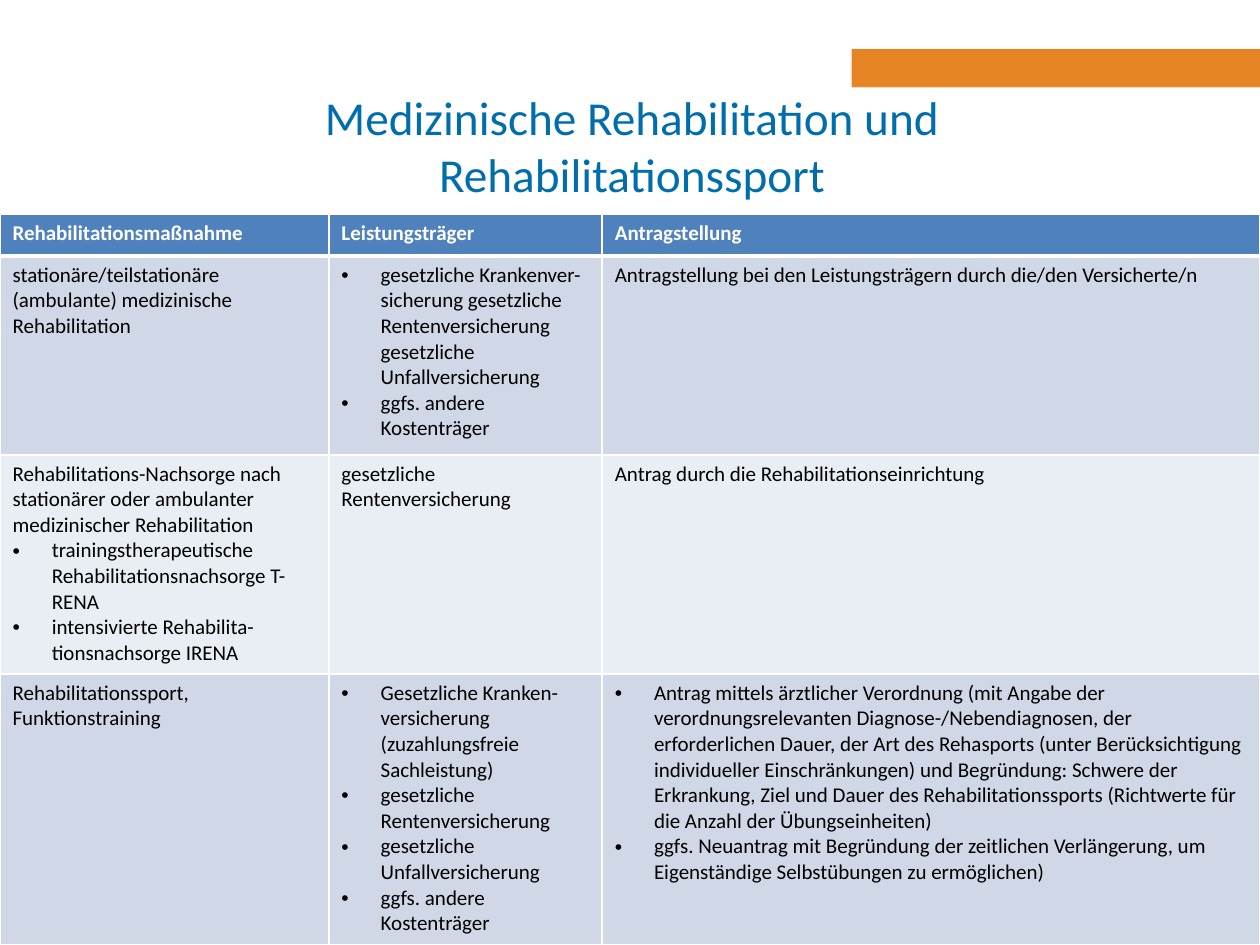
from lxml import etree
from pptx import Presentation
from pptx.dml.color import RGBColor
from pptx.enum import shapes, text
from pptx.oxml.ns import qn
from pptx.util import Cm, Pt

# Content: a leading "• " marks a bulleted paragraph
TITLE = "Medizinische Rehabilitation und Rehabilitationssport"
HEADER = ["Rehabilitationsmaßnahme", "Leistungsträger", "Antragstellung"]
BODY = [
    [
        ["stationäre/teilstationäre (ambulante) medizinische Rehabilitation"],
        ["• gesetzliche Krankenver-sicherung gesetzliche Rentenversicherung "
         "gesetzliche Unfallversicherung",
         "• ggfs. andere Kostenträger"],
        ["Antragstellung bei den Leistungsträgern durch die/den Versicherte/n"],
    ],
    [
        ["Rehabilitations-Nachsorge nach stationärer oder ambulanter "
         "medizinischer Rehabilitation",
         "• trainingstherapeutische Rehabilitationsnachsorge T-RENA",
         "• intensivierte Rehabilita-tionsnachsorge IRENA"],
        ["gesetzliche Rentenversicherung"],
        ["Antrag durch die Rehabilitationseinrichtung"],
    ],
    [
        ["Rehabilitationssport,\vFunktionstraining"],
        ["• Gesetzliche Kranken-versicherung (zuzahlungsfreie Sachleistung)",
         "• gesetzliche Rentenversicherung",
         "• gesetzliche Unfallversicherung",
         "• ggfs. andere Kostenträger"],
        ["• Antrag mittels ärztlicher Verordnung (mit Angabe der "
         "verordnungsrelevanten Diagnose-/Nebendiagnosen, der erforderlichen "
         "Dauer, der Art des Rehasports (unter Berücksichtigung individueller "
         "Einschränkungen) und Begründung: Schwere der Erkrankung, Ziel und "
         "Dauer des Rehabilitationssports (Richtwerte für die Anzahl der "
         "Übungseinheiten)",
         "• ggfs. Neuantrag mit Begründung der zeitlichen Verlängerung, um "
         "Eigenständige Selbstübungen zu ermöglichen)"],
    ],
]

FONT = "Calibri"
WHITE = RGBColor(0xFF, 0xFF, 0xFF)
BLACK = RGBColor(0, 0, 0)
ORANGE = RGBColor(0xE6, 0x83, 0x23)
TITLE_BLUE = RGBColor(0x00, 0x6E, 0xAC)
HEADER_BLUE = RGBColor(0x4F, 0x81, 0xBD)
BANDS = [RGBColor(0xD0, 0xD8, 0xE8), RGBColor(0xE9, 0xED, 0xF4)]

PAGE_WIDTH, PAGE_HEIGHT = 25.4, 19.05
COLUMN_WIDTHS = [6.63, 5.51, 13.26]
ROW_HEIGHTS = [0.84, 4.01, 4.42, 5.46]
TABLE_TOP = 4.32
BULLET_INDENT = Cm(0.79)


def add_bar(page, left, top, width, height, color):
    bar = page.shapes.add_shape(shapes.MSO_SHAPE.RECTANGLE,
                                Cm(left), Cm(top), Cm(width), Cm(height))
    bar.shadow.inherit = False
    bar.fill.solid()
    bar.fill.fore_color.rgb = color
    bar.line.fill.background()
    return bar


def style(para, size, color, bold=False):
    for span in para.runs:
        span.font.name = FONT
        span.font.size = Pt(size)
        span.font.bold = bold
        span.font.color.rgb = color


def add_bullet(para):
    properties = para._p.get_or_add_pPr()
    properties.set("marL", str(BULLET_INDENT))
    properties.set("indent", str(-BULLET_INDENT))
    etree.SubElement(properties, qn("a:buFont"), typeface="Arial")
    etree.SubElement(properties, qn("a:buChar"), char="•")


def set_borders(cell, bottom_width):
    properties = cell._tc.get_or_add_tcPr()
    widths = {"a:lnL": 1, "a:lnR": 1, "a:lnT": 1, "a:lnB": bottom_width}
    for place, (tag, width) in enumerate(widths.items()):
        line = etree.Element(qn(tag), w=str(Pt(width)))
        fill = etree.SubElement(line, qn("a:solidFill"))
        etree.SubElement(fill, qn("a:srgbClr"), val=str(WHITE))
        properties.insert(place, line)


def fill_cell(cell, lines, background, color, bold=False, bottom_width=1):
    cell.fill.solid()
    cell.fill.fore_color.rgb = background
    set_borders(cell, bottom_width)
    frame = cell.text_frame
    for number, line in enumerate(lines):
        para = frame.add_paragraph() if number else frame.paragraphs[0]
        para.text = line.removeprefix("• ")
        if line.startswith("• "):
            add_bullet(para)
        style(para, 12, color, bold)


deck = Presentation()
deck.slide_width, deck.slide_height = Cm(PAGE_WIDTH), Cm(PAGE_HEIGHT)
page = deck.slides.add_slide(deck.slide_layouts[6])

# Orange accent and the translucent band behind the title
add_bar(page, 17.17, 0.99, PAGE_WIDTH - 17.17, 0.78, ORANGE)
band = add_bar(page, 0, 1.75, PAGE_WIDTH, 2.36, WHITE)
band_color = band.fill._xPr.find(".//" + qn("a:srgbClr"))
etree.SubElement(band_color, qn("a:alpha"), val="55000")

# Title
box = page.shapes.add_textbox(Cm(3.76), Cm(1.75), Cm(17.96), Cm(2.36))
frame = box.text_frame
frame.word_wrap = True
frame.vertical_anchor = text.MSO_ANCHOR.MIDDLE
frame.text = TITLE
frame.paragraphs[0].alignment = text.PP_ALIGN.CENTER
style(frame.paragraphs[0], 27, TITLE_BLUE)

# Table
table = page.shapes.add_table(
    len(ROW_HEIGHTS), len(COLUMN_WIDTHS), Cm(0), Cm(TABLE_TOP),
    Cm(sum(COLUMN_WIDTHS)), Cm(sum(ROW_HEIGHTS))).table
for column, width in zip(table.columns, COLUMN_WIDTHS):
    column.width = Cm(width)
for row, height in zip(table.rows, ROW_HEIGHTS):
    row.height = Cm(height)

for column, label in enumerate(HEADER):
    fill_cell(table.cell(0, column), [label], HEADER_BLUE, WHITE,
              bold=True, bottom_width=3)
for row, cells in enumerate(BODY):
    for column, lines in enumerate(cells):
        fill_cell(table.cell(row + 1, column), lines,
                  BANDS[row % len(BANDS)], BLACK)

deck.save("out.pptx")
